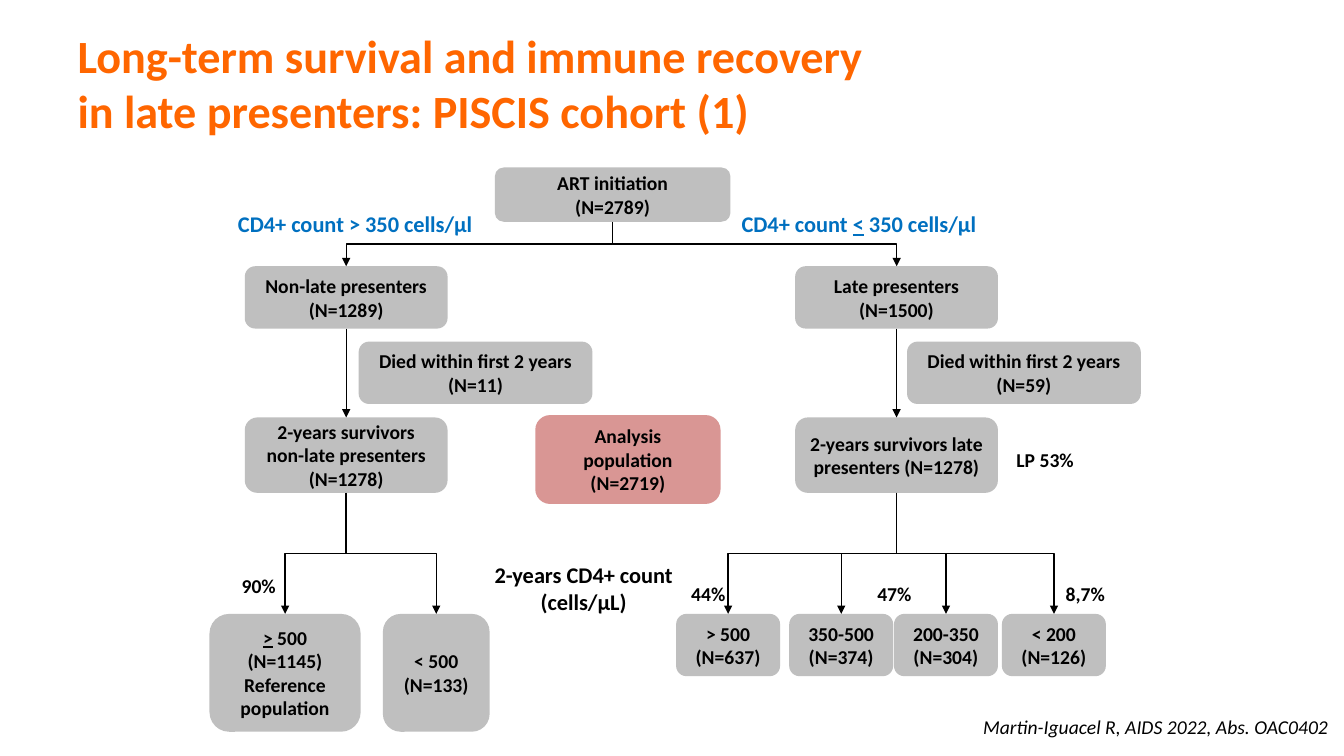
from dataclasses import dataclass

from lxml import etree
from pptx import Presentation
from pptx.dml.color import RGBColor
from pptx.enum.shapes import MSO_CONNECTOR, MSO_SHAPE
from pptx.enum.text import MSO_ANCHOR, MSO_AUTO_SIZE, PP_ALIGN
from pptx.oxml.ns import qn
from pptx.shapes.autoshape import Shape
from pptx.shapes.connector import Connector
from pptx.slide import Slide
from pptx.text.text import TextFrame
from pptx.util import Cm, Pt

ROUNDED = MSO_SHAPE.ROUNDED_RECTANGLE
STRAIGHT, ELBOW = MSO_CONNECTOR.STRAIGHT, MSO_CONNECTOR.ELBOW
MIDDLE = MSO_ANCHOR.MIDDLE
LEFT, CENTER, RIGHT = PP_ALIGN.LEFT, PP_ALIGN.CENTER, PP_ALIGN.RIGHT
GROW = MSO_AUTO_SIZE.SHAPE_TO_FIT_TEXT
TITLE_ONLY = 5
TOP_SIDE, BOTTOM_SIDE = 0, 2

COLORS = {
    "title": "FF6600",
    "group": "BFBFBF",
    "analysis": "D99694",
    "threshold": "0070C0",
    "text": "000000",
}
FORMATS = {
    "title": {"size": Pt(33), "bold": True},
    "group": {"size": Pt(14), "bold": True},
    "heading": {"size": Pt(16), "bold": True},
    "citation": {"size": Pt(14), "bold": False, "italic": True},
}

PRESENTERS_TOP, DIED_TOP, SURVIVORS_TOP, CD4_TOP = 6.71, 8.61, 10.52, 15.47
NON_LATE_LEFT, LATE_LEFT = 6.17, 20.04
COLUMN_WIDTH, DIED_WIDTH, CD4_WIDTH = 5.11, 5.89, 2.62
ROW_HEIGHT, SURVIVORS_HEIGHT, REFERENCE_HEIGHT = 1.57, 1.9, 2.97


@dataclass(frozen=True)
class Group:
    key: str
    text: str
    left: float
    top: float
    width: float
    height: float = ROW_HEIGHT
    color: str = "group"


@dataclass(frozen=True)
class Label:
    text: str
    left: float
    top: float
    width: float
    height: float = 0.86
    style: str = "group"
    color: str = "text"
    align: PP_ALIGN = CENTER


@dataclass(frozen=True)
class Flow:
    source: str
    targets: tuple[str, ...]


GROUPS = (
    Group("initiation", "ART initiation\n(N=2789)", 12.47, 4.22, 5.94, 1.37),
    Group("non-late", "Non-late presenters\n(N=1289)", NON_LATE_LEFT, PRESENTERS_TOP, COLUMN_WIDTH),
    Group("late", "Late presenters\n(N=1500)", LATE_LEFT, PRESENTERS_TOP, COLUMN_WIDTH),
    Group("late died", "Died within first 2 years (N=59)", 22.86, DIED_TOP, DIED_WIDTH),
    Group("non-late died", "Died within first 2 years (N=11)", 9.04, DIED_TOP, DIED_WIDTH),
    Group("non-late survivors", "2-years survivors non-late presenters (N=1278)",
          NON_LATE_LEFT, SURVIVORS_TOP, COLUMN_WIDTH, SURVIVORS_HEIGHT),
    Group("late survivors", "2-years survivors late presenters (N=1278)",
          LATE_LEFT, SURVIVORS_TOP, COLUMN_WIDTH, SURVIVORS_HEIGHT),
    Group("reference", "_>_ 500\n(N=1145)\nReference\npopulation", 5.28, CD4_TOP, 3.81, REFERENCE_HEIGHT),
    Group("non-late < 500", "< 500\n(N=133)", 9.65, CD4_TOP, 2.69, REFERENCE_HEIGHT),
    Group("late > 500", "> 500\n(N=637)", 17.04, CD4_TOP, CD4_WIDTH),
    Group("late 350-500", "350-500\n(N=374)", 19.89, CD4_TOP, CD4_WIDTH),
    Group("late 200-350", "200-350\n(N=304)", 22.53, CD4_TOP, CD4_WIDTH),
    Group("late < 200", "< 200\n(N=126)", 25.25, CD4_TOP, CD4_WIDTH),
    Group("analysis", "Analysis population\n(N=2719)", 13.49, 10.46, 4.67, 2.24, "analysis"),
)
LABELS = (
    Label("90%", 5.82, 14.33, 1.4),
    Label("44%", 17.15, 14.55, 1.4),
    Label("47%", 21.84, 14.55, 1.4),
    Label("8,7%", 26.59, 14.55, 1.52),
    Label("LP 53%", 25.35, 11.15, 1.98),
    Label("CD4+ count > 350 cells/µl", 5.66, 5.18, 6.5, 0.94, "heading", "threshold", RIGHT),
    Label("CD4+ count _<_ 350 cells/µl", 18.44, 5.18, 6.5, 0.94, "heading", "threshold", LEFT),
    Label("2-years CD4+ count\n(cells/µL)", 12.17, 14.02, 5.08, 1.63, "heading"),
    Label("Martin-Iguacel R, AIDS 2022, Abs. OAC0402", 24.46, 17.88, 9.27, style="citation", align=RIGHT),
)
FLOWS = (
    Flow("initiation", ("non-late", "late")),
    Flow("non-late", ("non-late survivors",)),
    Flow("late", ("late survivors",)),
    Flow("non-late survivors", ("reference", "non-late < 500")),
    Flow("late survivors", ("late > 500", "late 350-500", "late 200-350", "late < 200")),
)


def write(frame: TextFrame, text: str, style: str, color: str, align: PP_ALIGN) -> None:
    paragraph = frame.paragraphs[0]
    paragraph.alignment = align
    for row, line in enumerate(text.split("\n")):
        if row:
            paragraph.add_line_break()
        for position, part in enumerate(line.split("_")):
            if not part:
                continue
            run = paragraph.add_run()
            run.text = part
            run.font.name = "Calibri"
            run.font.color.rgb = RGBColor.from_string(COLORS[color])
            for attribute, value in FORMATS[style].items():
                setattr(run.font, attribute, value)
            if position % 2:
                run.font.underline = True


def add_title(slide: Slide) -> None:
    title = slide.shapes.title
    title.left, title.top, title.width, title.height = Cm(1.7), Cm(0.03), Cm(23.52), Cm(4.11)
    title.text_frame.vertical_anchor = MIDDLE
    write(title.text_frame, "Long-term survival and immune recovery\nin late presenters: PISCIS cohort (1)",
          "title", "title", LEFT)


def add_group(slide: Slide, group: Group) -> Shape:
    box = slide.shapes.add_shape(ROUNDED, Cm(group.left), Cm(group.top), Cm(group.width), Cm(group.height))
    box.shadow.inherit = False
    box.fill.solid()
    box.fill.fore_color.rgb = RGBColor.from_string(COLORS[group.color])
    box.line.fill.background()
    box.text_frame.word_wrap = True
    box.text_frame.vertical_anchor = MIDDLE
    write(box.text_frame, group.text, "group", "text", CENTER)
    return box


def add_label(slide: Slide, label: Label) -> None:
    frame = slide.shapes.add_textbox(
        Cm(label.left), Cm(label.top), Cm(label.width), Cm(label.height)).text_frame
    frame.word_wrap = False
    frame.auto_size = GROW
    write(frame, label.text, label.style, label.color, label.align)


def turn_downward(arrow: Connector) -> None:
    start_x, start_y, end_x, end_y = arrow.begin_x, arrow.begin_y, arrow.end_x, arrow.end_y
    drop, reach = end_y - start_y, abs(end_x - start_x)
    arrow.left, arrow.top = (start_x + end_x - drop) // 2, (start_y + end_y - reach) // 2
    arrow.width, arrow.height = drop, reach
    rightward = end_x > start_x
    transform = arrow._element.spPr.find(qn("a:xfrm"))
    transform.set("rot", "16200000" if rightward else "5400000")
    transform.set("flipH", "1" if rightward else "0")
    transform.set("flipV", "0")


def add_arrow(slide: Slide, source: Shape, target: Shape, kind: MSO_CONNECTOR) -> None:
    arrow = slide.shapes.add_connector(kind, 0, 0, 0, 0)
    arrow.begin_connect(source, BOTTOM_SIDE)
    arrow.end_connect(target, TOP_SIDE)
    if kind == ELBOW:
        turn_downward(arrow)
    arrow.line.color.rgb = RGBColor.from_string(COLORS["text"])
    arrow.line.width = Pt(1)
    properties = arrow._element.spPr
    etree.SubElement(properties.find(qn("a:ln")), qn("a:tailEnd"), type="triangle")
    etree.SubElement(properties, qn("a:effectLst"))


def main() -> None:
    deck = Presentation()
    deck.slide_width, deck.slide_height = Cm(33.87), Cm(19.05)
    slide = deck.slides.add_slide(deck.slide_layouts[TITLE_ONLY])
    add_title(slide)
    boxes = {group.key: add_group(slide, group) for group in GROUPS}
    for flow in FLOWS:
        kind = ELBOW if len(flow.targets) > 1 else STRAIGHT
        for target in flow.targets:
            add_arrow(slide, boxes[flow.source], boxes[target], kind)
    for label in LABELS:
        add_label(slide, label)
    deck.save("out.pptx")


if __name__ == "__main__":
    main()
